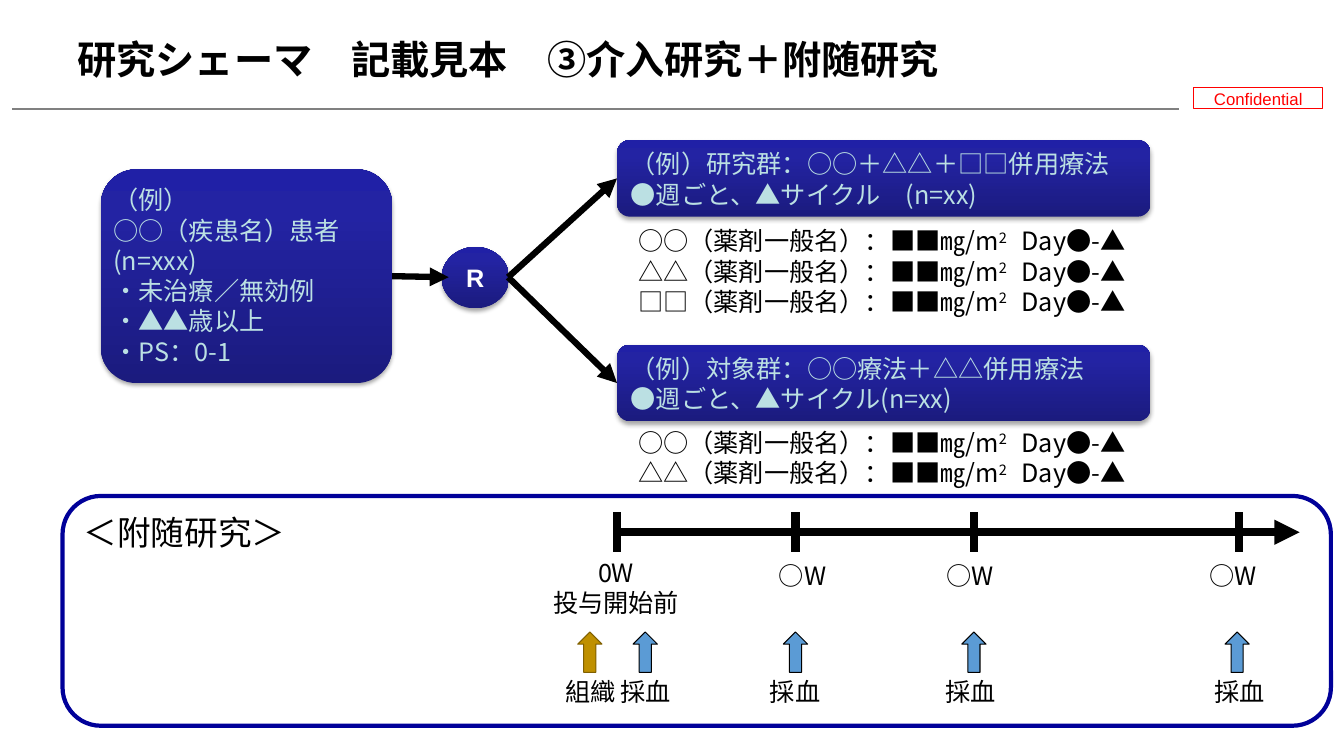
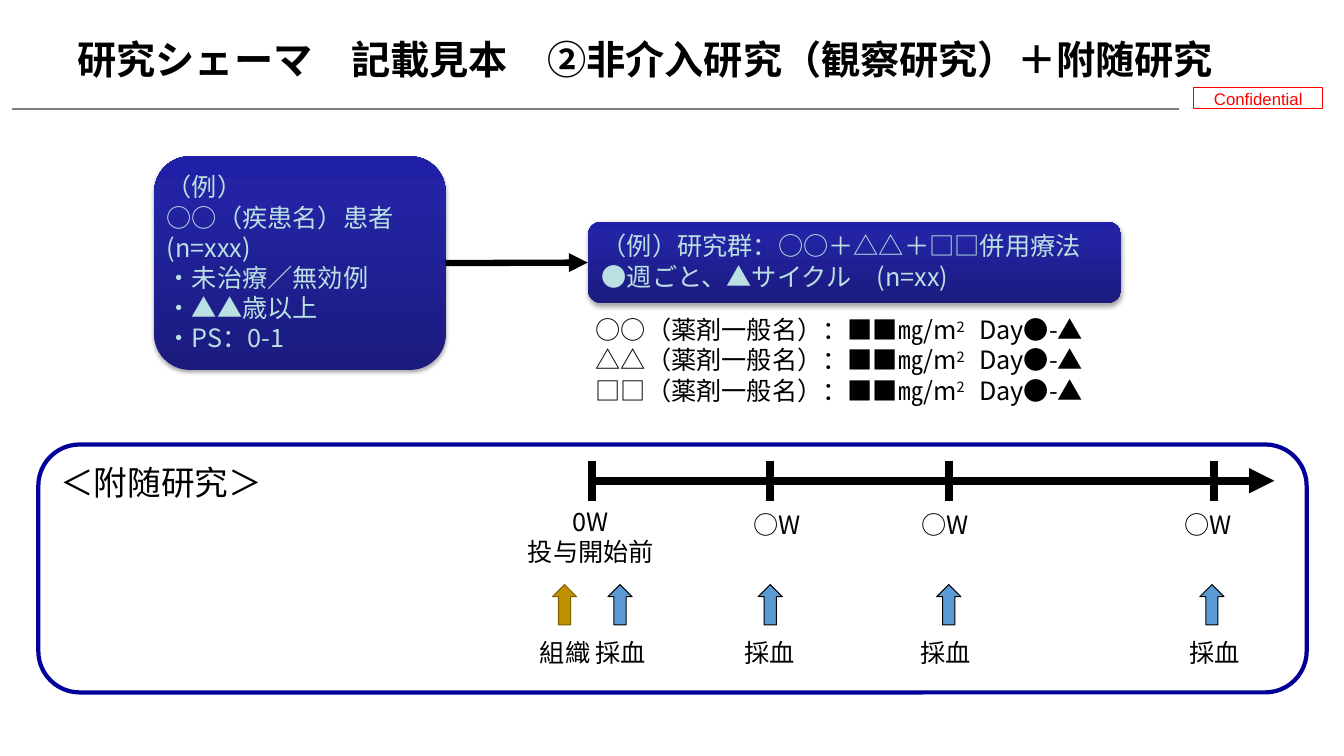
"""Build two study-schema slides: a randomised and an observational study, each with an ancillary study."""
from lxml.etree import SubElement
from pptx import Presentation
from pptx.dml.color import RGBColor
from pptx.enum.shapes import MSO_CONNECTOR, MSO_SHAPE
from pptx.enum.text import MSO_ANCHOR, PP_ALIGN
from pptx.oxml import parse_xml
from pptx.oxml.ns import nsdecls, qn
from pptx.util import Inches, Pt

GOTHIC = "Noto Sans CJK JP"
BLACK, WHITE, RED, GRAY = "000000", "FFFFFF", "FF0000", "808080"
PALE, NAVY, BLUE, GOLD, BROWN = "BBE0E3", "000099", "5B9BD5", "BF9000", "806000"
GRADIENT = [(0, "1B1B7E"), (80, "2323A3"), (100, "2020A6")]

PATIENTS = "（例）\n○○（疾患名）患者\n(n=xxx)\n・未治療／無効例\n・▲▲歳以上\n・PS：0-1"
STUDY_ARM = "（例）研究群：○○＋△△＋□□併用療法\n●週ごと、▲サイクル\u3000(n=xx)".replace("\u3000", "　")
CONTROL_ARM = "（例）対象群：○○療法＋△△併用療法\n●週ごと、▲サイクル(n=xx)"
DOSES = [f"{drug}（薬剤一般名）：■■㎎/m^2　^Day●-▲" for drug in ("○○", "△△", "□□")]

STUDIES = [
    dict(title="研究シェーマ　記載見本　③介入研究＋附随研究",
         patients=(1, 1.68), randomised=True,
         arms=[(6.12, 1.39, 0.76, STUDY_ARM), (6.12, 3.42, 0.76, CONTROL_ARM)],
         doses=[(6.23, 2.19, DOSES), (6.23, 4.19, DOSES[:2])],
         panel=(0.62, 4.92, 2.28), start=6.12, axis=5.28, arrows=6.27, labels=6.66),
    dict(title="研究シェーマ　記載見本　②非介入研究（観察研究）＋附随研究",
         patients=(1.53, 1.55), randomised=False,
         arms=[(5.83, 2.2, 0.81, STUDY_ARM)],
         doses=[(5.81, 3.07, DOSES)],
         panel=(0.38, 4.41, 2.46), start=5.87, axis=4.77, arrows=5.8, labels=6.27),
]
VISITS = [(0, -0.01, 0.2, "0W\n投与開始前"), (1.77, 1.84, 0.23, "○W"),
          (3.54, 3.5, 0.23, "○W"), (6.17, 6.11, 0.23, "○W")]
SAMPLES = [(-0.27, -0.27, "組織", GOLD, BROWN), (0.28, 0.28, "採血", BLUE, BLACK),
           (1.77, 1.76, "採血", BLUE, BLACK), (3.54, 3.5, "採血", BLUE, BLACK),
           (6.15, 6.17, "採血", BLUE, BLACK)]


def paint(item, fill=None, line=None, width=0.75):
    """Give a shape, connector or font its solid fill and its line."""
    if hasattr(item, "fill"):
        if fill:
            item.fill.solid()
            item.fill.fore_color.rgb = RGBColor.from_string(fill)
        else:
            item.fill.background()
    if line:
        item.line.color.rgb = RGBColor.from_string(line)
        item.line.width = Pt(width)


def write(shape, text, size=18, color=BLACK, font=GOTHIC, bold=False,
          align=PP_ALIGN.LEFT, anchor=MSO_ANCHOR.TOP, inset=0.1):
    """Write one paragraph a line, with superscript between carets."""
    frame = shape.text_frame
    frame.word_wrap = True
    frame.vertical_anchor = anchor
    frame.margin_left = frame.margin_right = Inches(inset)
    for number, line in enumerate(text.split("\n")):
        paragraph = frame.paragraphs[0] if number == 0 else frame.add_paragraph()
        paragraph.alignment = align
        paragraph.line_spacing = Pt(size * 1.2)
        for position, piece in enumerate(line.split("^")):
            run = paragraph.add_run()
            run.text = piece
            run.font.size, run.font.bold, run.font.name = Pt(size), bold, font
            paint(run.font, color)
            properties = run._r.get_or_add_rPr()
            SubElement(properties, qn("a:ea")).set("typeface", font)
            if position % 2:
                properties.set("baseline", "30000")


prs = Presentation()
prs.slide_width, prs.slide_height = Inches(13.33), Inches(7.5)

for study in STUDIES:
    slide = prs.slides.add_slide(prs.slide_layouts[6])
    shapes = slide.shapes

    confidential = shapes.add_shape(MSO_SHAPE.RECTANGLE, Inches(11.84), Inches(0.87),
                                    Inches(1.28), Inches(0.21))
    confidential.shadow.inherit = False
    paint(confidential, WHITE, RED)
    write(confidential, "Confidential", size=12, color=RED, font="Arial",
          align=PP_ALIGN.CENTER, anchor=MSO_ANCHOR.MIDDLE)
    title = shapes.add_textbox(Inches(0.67), Inches(0.3), Inches(11.83), Inches(0.68))
    write(title, study["title"], size=28, bold=True)

    left, top = study["patients"]
    blocks = [(MSO_SHAPE.ROUNDED_RECTANGLE, left, top, 2.89, 2.12, PATIENTS,
               dict(color=PALE, inset=0.02))]
    blocks += [(MSO_SHAPE.ROUNDED_RECTANGLE, x, y, 5.29, height, text, dict(color=PALE))
               for x, y, height, text in study["arms"]]
    if study["randomised"]:
        blocks.append((MSO_SHAPE.OVAL, 4.38, 2.45, 0.67, 0.61, "R",
                       dict(color=WHITE, font="Arial", bold=True,
                            align=PP_ALIGN.CENTER, anchor=MSO_ANCHOR.MIDDLE)))
    drawn = []
    for kind, x, y, width, height, text, style in blocks:
        block = shapes.add_shape(kind, Inches(x), Inches(y), Inches(width), Inches(height))
        block.line.fill.background()
        stops = "".join(f'<a:gs pos="{place * 1000}"><a:srgbClr val="{color}"/></a:gs>'
                        for place, color in GRADIENT)
        outline = block._element.spPr.find(qn("a:ln"))
        outline.addprevious(parse_xml(
            f'<a:gradFill {nsdecls("a")} rotWithShape="1"><a:gsLst>{stops}</a:gsLst>'
            '<a:lin ang="16200000" scaled="0"/></a:gradFill>'))
        outline.addnext(parse_xml(
            f'<a:effectLst {nsdecls("a")}><a:outerShdw blurRad="40000" dist="23000" '
            'dir="5400000" rotWithShape="0"><a:srgbClr val="000000">'
            '<a:alpha val="35000"/></a:srgbClr></a:outerShdw></a:effectLst>'))
        write(block, text, **style)
        drawn.append(block)
    patients, arms = drawn[0], drawn[1:1 + len(study["arms"])]

    for x, y, doses in study["doses"]:
        regimen = shapes.add_textbox(Inches(x), Inches(y), Inches(5.88),
                                     Inches(0.1 + 0.3 * len(doses)))
        write(regimen, "\n".join(doses))

    x, y, height = study["panel"]
    panel = shapes.add_shape(MSO_SHAPE.ROUNDED_RECTANGLE, Inches(x), Inches(y),
                             Inches(12.58), Inches(height))
    panel.shadow.inherit = False
    paint(panel, line=NAVY, width=3)
    write(panel, "＜附随研究＞", size=24)

    start, axis = study["start"], study["axis"]
    lines = [(0.12, 1.08, 11.69, 1.08, GRAY, 1.5, False, None, None),
             (start - 0.03, axis, start + 6.77, axis, BLACK, 6, True, None, None)]
    if study["randomised"]:
        lines.append((3.89, 2.75, 4.45, 2.75, BLACK, 4.5, True, patients, None))
        lines += [(5.04, 2.75, 6.12, y, BLACK, 4.5, True, None, arm)
                  for y, arm in zip((1.77, 3.8), arms)]
    else:
        lines.append((4.42, 2.61, 5.83, 2.61, BLACK, 4.5, True, patients, arms[0]))

    for tick, center, drop, text in VISITS:
        x = start + tick
        lines.append((x, axis - 0.2, x, axis + 0.2, BLACK, 6, False, None, None))
        week = shapes.add_textbox(Inches(start + center - 1.19), Inches(axis + drop),
                                  Inches(2.38), Inches(0.4 + 0.3 * text.count("\n")))
        write(week, text, align=PP_ALIGN.CENTER)

    for x1, y1, x2, y2, color, width, arrow, source, target in lines:
        connector = shapes.add_connector(MSO_CONNECTOR.STRAIGHT, Inches(x1), Inches(y1),
                                         Inches(x2), Inches(y2))
        if source:
            connector.begin_connect(source, 3)
        if target:
            connector.end_connect(target, 1)
        paint(connector, line=color, width=width)
        if arrow:
            SubElement(connector.line._get_or_add_ln(), qn("a:tailEnd")).set("type", "triangle")
        SubElement(connector._element.spPr, qn("a:effectLst"))

    for arrow_center, label_center, text, fill, line in SAMPLES:
        arrow = shapes.add_shape(MSO_SHAPE.UP_ARROW, Inches(start + arrow_center - 0.12),
                                 Inches(study["arrows"]), Inches(0.24), Inches(0.4))
        arrow.shadow.inherit = False
        paint(arrow, fill, line)
        sample = shapes.add_textbox(Inches(start + label_center - 0.42),
                                    Inches(study["labels"]), Inches(0.85), Inches(0.4))
        write(sample, text, align=PP_ALIGN.CENTER)

prs.save("out.pptx")
